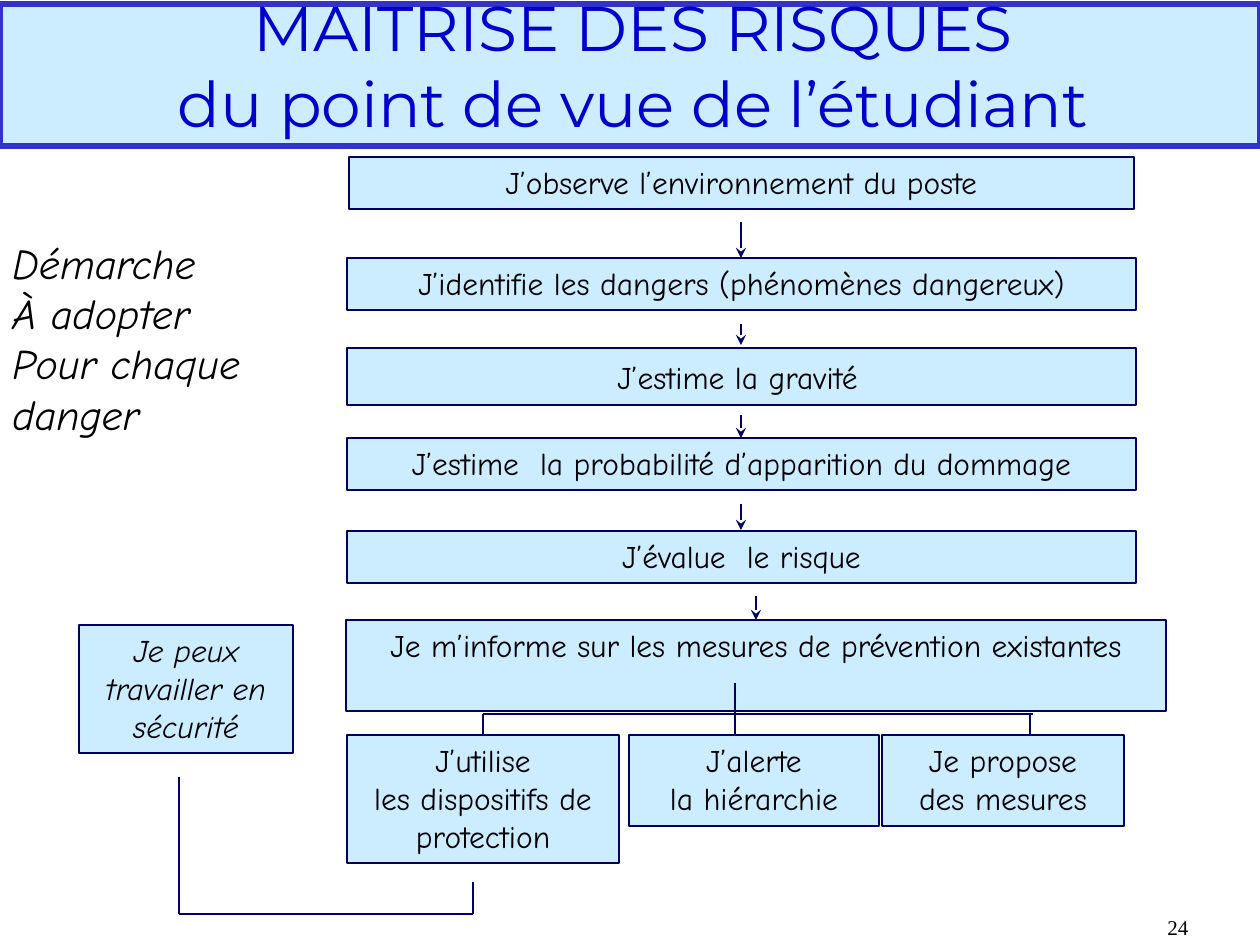
import pptx
import pptx.util
import pptx.dml.color
import pptx.enum.shapes
import pptx.enum.text
import pptx.oxml.ns
import lxml.etree

PX = 914400 // 126
COLORS = {
    "panel": "CCECFF",
    "banner_edge": "3333CC",
    "title": "0000CC",
    "edge": "000066",
    "text": "000000",
}
BODY_FONT = "Comic Neue"
LEFT = pptx.enum.text.PP_ALIGN.LEFT
CENTER = pptx.enum.text.PP_ALIGN.CENTER
TOP = pptx.enum.text.MSO_ANCHOR.TOP
BOTTOM = pptx.enum.text.MSO_ANCHOR.BOTTOM


def px(*lengths):
    return [pptx.util.Emu(length * PX) for length in lengths]


def color(name):
    return pptx.dml.color.RGBColor.from_string(COLORS[name])


def add_run(paragraph, words, size, font=BODY_FONT, tint="text", italic=False):
    run = paragraph.add_run()
    run.text = words
    run.font.size = pptx.util.Pt(size)
    run.font.name = font
    run.font.italic = italic
    run.font.color.rgb = color(tint)


def write(holder, lines, size, align=CENTER, anchor=TOP, **style):
    frame = holder.text_frame
    frame.word_wrap = True
    frame.vertical_anchor = anchor
    for index, words in enumerate(lines):
        paragraph = frame.add_paragraph() if index else frame.paragraphs[0]
        paragraph.alignment = align
        add_run(paragraph, words, size, **style)


def add_panel(slide, box, edge="edge", width=1):
    panel = slide.shapes.add_shape(
        pptx.enum.shapes.MSO_SHAPE.RECTANGLE, *px(*box))
    panel.shadow.inherit = False
    panel.fill.solid()
    panel.fill.fore_color.rgb = color("panel")
    panel.line.color.rgb = color(edge)
    panel.line.width = pptx.util.Pt(width)
    return panel


def add_line(slide, x1, y1, x2, y2, arrow=False):
    line = slide.shapes.add_connector(
        pptx.enum.shapes.MSO_CONNECTOR.STRAIGHT, *px(x1, y1, x2, y2))
    line.line.color.rgb = color("edge")
    line.line.width = pptx.util.Pt(1)
    qn = pptx.oxml.ns.qn
    if arrow:
        lxml.etree.SubElement(line.line._get_or_add_ln(), qn("a:tailEnd"),
                              type="stealth")
    lxml.etree.SubElement(line._element.spPr, qn("a:effectLst"))


def add_label(slide, box, lines, size, **style):
    write(slide.shapes.add_textbox(*px(*box)), lines, size, **style)


def title_banner(slide, x, y, w, h):
    add_panel(slide, (x, y, w, h), "banner_edge", 3)
    add_label(slide, (x + 20, y - 5, w - 34, h + 5),
              ["MAITRISE DES RISQUES", "du point de vue de l’étudiant"],
              36, anchor=BOTTOM, font="Montserrat", tint="title")


def step_chain(slide, x, y, w):
    # Each step: text, top, height, left shift, extra width, arrow start and end
    steps = [
        ("J’observe l’environnement du poste", 0, 52, 2, -4, None),
        ("J’identifie les dangers (phénomènes dangereux)", 101, 52, 0, 0, (65, 101)),
        ("J’estime la gravité", 191, 57, 0, 0, (167, 188)),
        ("J’estime  la probabilité d’apparition du dommage", 281, 52, 0, 0, (258, 281)),
        ("J’évalue  le risque", 374, 52, 0, 0, (347, 373)),
        ("Je m’informe sur les mesures de prévention existantes",
         463, 91, -1, 31, (439, 463)),
    ]
    for words, top, height, shift, extra, arrow in steps:
        left, width = x + shift, w + extra
        step = add_panel(slide, (left, y + top, width, height))
        write(step, [words], 18)
        if words == "J’estime la gravité":
            # The larger closing space sets this line lower
            add_run(step.text_frame.paragraphs[0], " ", 20, "Arial Narrow")
        if arrow:
            middle = left + width // 2
            add_line(slide, middle, y + arrow[0], middle, y + arrow[1], True)


def measure_branches(slide, x, y):
    # Trunk, crossbar and drops
    bar, foot, trunk = y + 31, y + 52, x + 388
    add_line(slide, trunk, y, trunk, foot)
    add_line(slide, x + 136, bar, x + 686, bar)
    for drop in (136, 683):
        add_line(slide, x + drop, bar, x + drop, foot)
    # Three ways to act
    actions = [
        (0, 272, 128, ["J’utilise", "les dispositifs de protection"]),
        (282, 250, 91, ["J’alerte", "la hiérarchie"]),
        (535, 242, 91, ["Je propose", "des mesures"]),
    ]
    for left, width, height, lines in actions:
        write(add_panel(slide, (x + left, foot, width, height)), lines, 18)


def safe_work_loop(slide, x, y):
    outcome = add_panel(slide, (x, y, 214, 128))
    write(outcome, ["Je peux", "travailler en sécurité"], 18, italic=True)
    # Return path from the protection box
    left, right, floor = x + 100, x + 394, y + 289
    add_line(slide, left, y + 152, left, floor)
    add_line(slide, right, floor, left, floor)
    add_line(slide, right, y + 257, right, floor)


def main():
    deck = pptx.Presentation()
    deck.slide_width, deck.slide_height = px(1260, 945)
    slide = deck.slides.add_slide(deck.slide_layouts[6])

    title_banner(slide, 0, 4, 1260, 142)
    step_chain(slide, 347, 157, 789)
    measure_branches(slide, 347, 683)
    safe_work_loop(slide, 79, 625)
    # Side note
    add_label(slide, (0, 231, 346, 214),
              ["Démarche", "À adopter", "Pour chaque", "danger"],
              24, align=LEFT, italic=True)
    # Page number
    add_label(slide, (1155, 908, 73, 37), ["24"], 12, align=LEFT,
              font="Times New Roman")

    deck.save("out.pptx")


if __name__ == "__main__":
    main()
